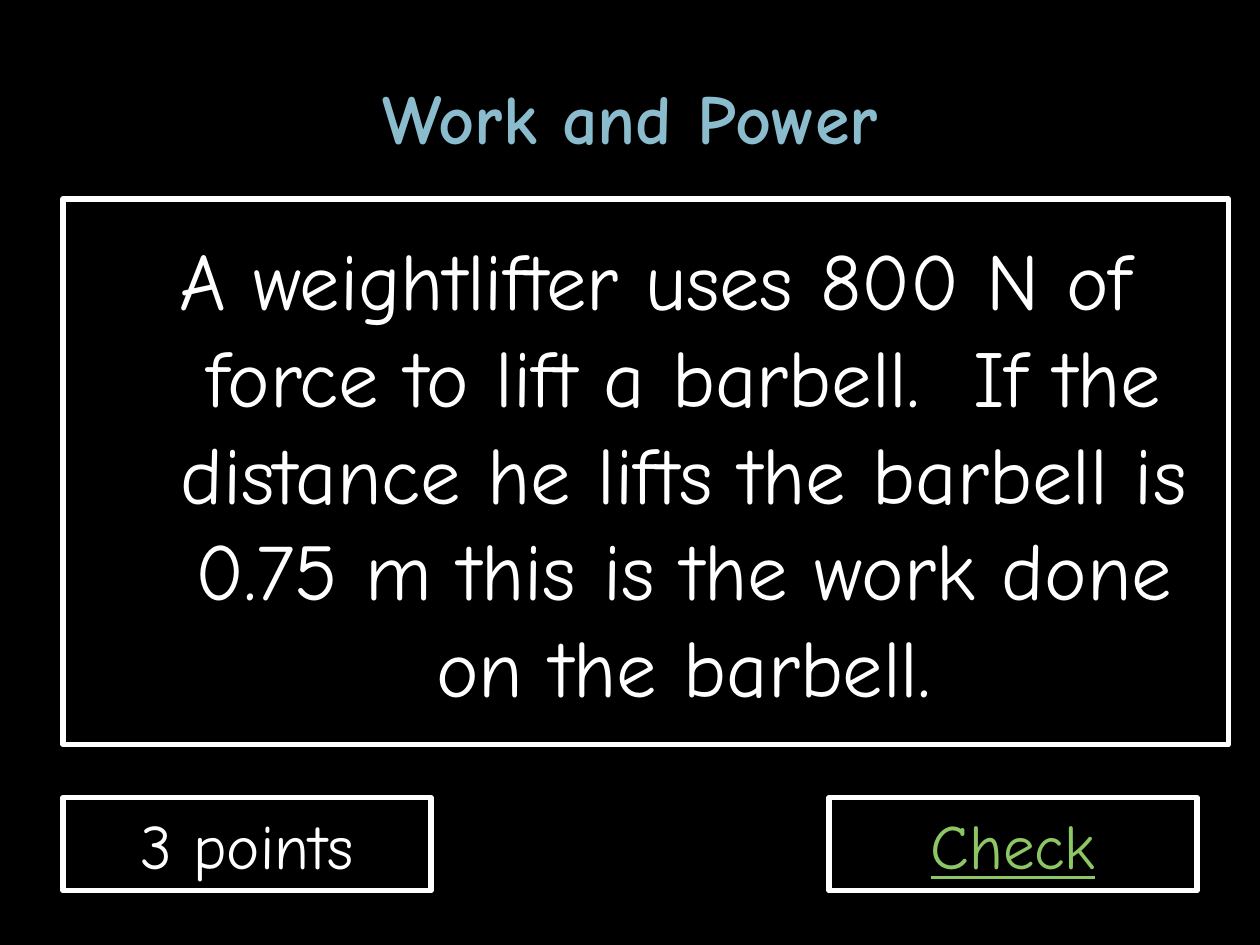
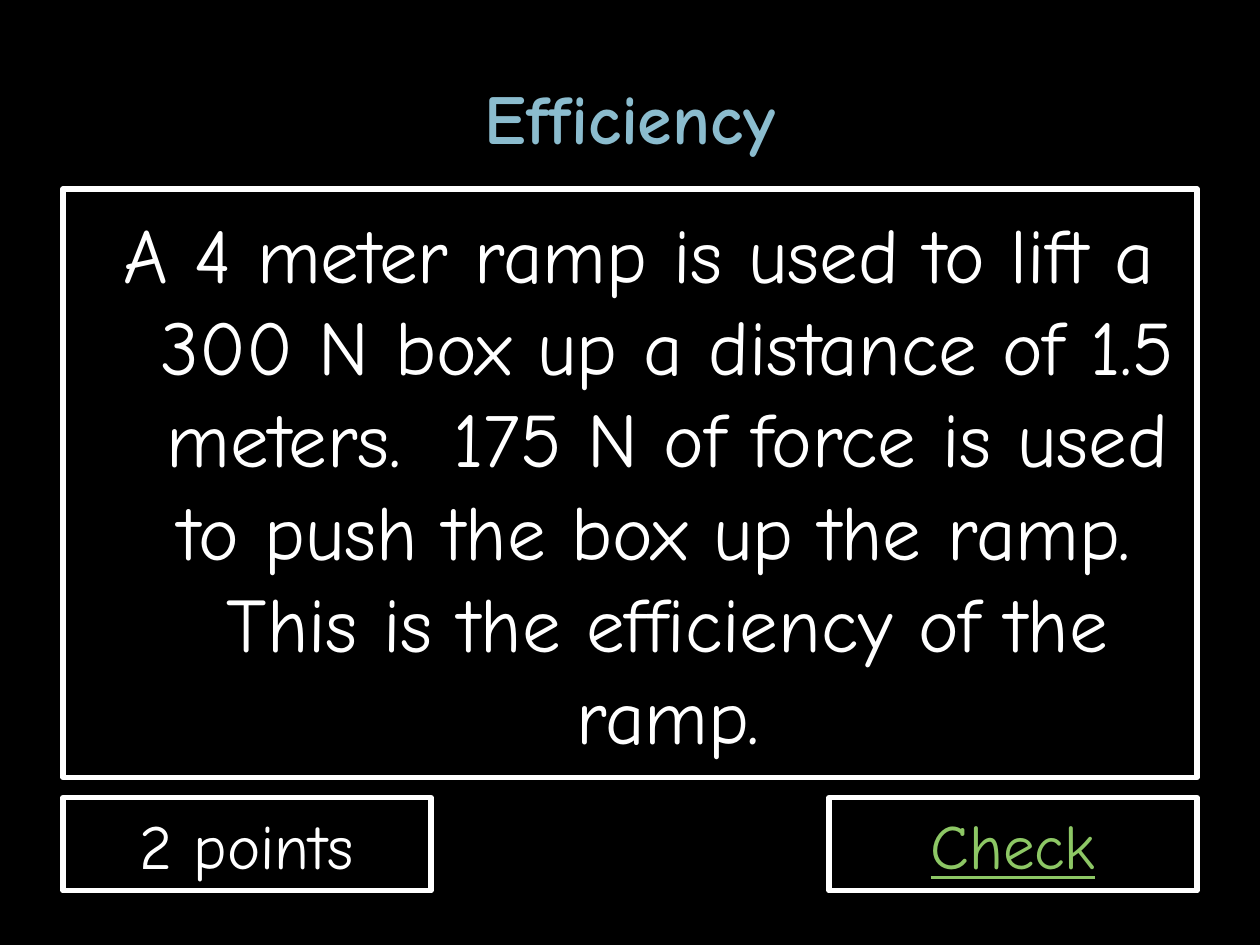
from pptx import Presentation
from pptx.util import Pt
from pptx.dml.color import RGBColor
from pptx.enum import shapes, text

COLORS = {"background": "000000", "title": "8BBCCE", "text": "FFFFFF", "check": "8DC765"}
FONT = "Comic Neue"
LEFT = 36
BUTTON_TOP, BUTTON_WIDTH, BUTTON_HEIGHT = 455.76, 210.24, 53.28
CHECK_LEFT = 720 - LEFT - BUTTON_WIDTH

QUESTIONS = [
    {
        "title": "Work and Power",
        "question": "A weightlifter uses 800 N of force to lift a barbell.  If the distance "
                    "he lifts the barbell is 0.75 m this is the work done on the barbell.",
        "frame": (LEFT, 113.76, 666, 311.76),
        "size": 46,
        "points": "3 points",
    },
    {
        "title": "Efficiency",
        "question": "A 4 meter ramp is used to lift a 300 N box up a distance of 1.5 meters.  "
                    "175 N of force is used to push the box up the ramp.  "
                    "This is the efficiency of the ramp.",
        "frame": (LEFT, 108, 648, 336.24),
        "size": 44,
        "points": "2 points",
    },
]


def write(box, words, color, **font_format):
    """Fill the box with one centred paragraph and return that paragraph."""
    frame = box.text_frame
    frame.word_wrap = True
    frame.vertical_anchor = text.MSO_ANCHOR.MIDDLE
    para = frame.paragraphs[0]
    para.alignment = text.PP_ALIGN.CENTER
    span = para.add_run()
    span.text = words
    span.font.name = FONT
    span.font.color.rgb = RGBColor.from_string(COLORS[color])
    for name, value in font_format.items():
        setattr(span.font, name, value)
    return para


def add_framed_text(page, place, words, color="text", **font_format):
    """Add a white-outlined rectangle with text and return its paragraph."""
    box = page.shapes.add_shape(shapes.MSO_SHAPE.RECTANGLE, *map(Pt, place))
    box.shadow.inherit = False
    box.fill.background()
    box.line.color.rgb = RGBColor.from_string(COLORS["text"])
    box.line.width = Pt(3)
    return write(box, words, color, **font_format)


deck = Presentation()
deck.slide_width, deck.slide_height = Pt(720), Pt(540)
title_only = deck.slide_layouts[5]

for item in QUESTIONS:
    page = deck.slides.add_slide(title_only)
    page.background.fill.solid()
    page.background.fill.fore_color.rgb = RGBColor.from_string(COLORS["background"])

    title = page.shapes.title
    title.left, title.top, title.width, title.height = map(Pt, (LEFT, 21.6, 648, 90))
    write(title, item["title"], "title", size=Pt(40), bold=True)

    question = add_framed_text(page, item["frame"], item["question"], size=Pt(item["size"]))
    indents = question._p.get_or_add_pPr()
    indents.set("marL", str(Pt(43.2)))
    indents.set("indent", str(Pt(-32.4)))

    buttons = [
        (LEFT, item["points"], "text", False),
        (CHECK_LEFT, "Check", "check", True),
    ]
    for left, label, color, underline in buttons:
        place = (left, BUTTON_TOP, BUTTON_WIDTH, BUTTON_HEIGHT)
        add_framed_text(page, place, label, color, size=Pt(36), underline=underline)

deck.save("out.pptx")
